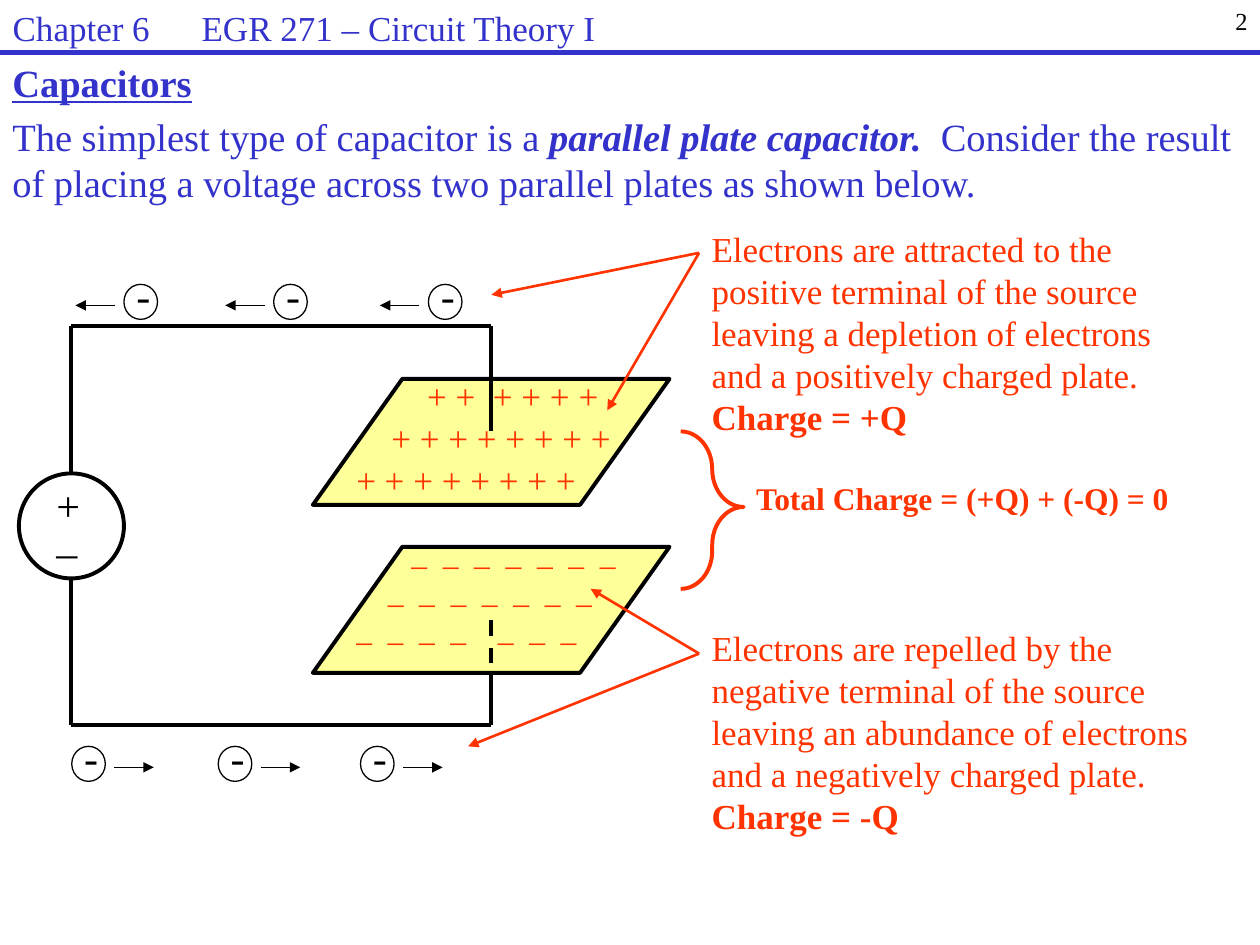
from lxml.etree import SubElement
from pptx import Presentation
from pptx.dml.color import RGBColor
from pptx.enum.dml import MSO_LINE
from pptx.enum.shapes import MSO_CONNECTOR, MSO_SHAPE
from pptx.enum.text import MSO_ANCHOR, PP_ALIGN
from pptx.oxml.ns import qn
from pptx.util import Pt


class Theme:
    font = "Times New Roman"
    blue = RGBColor(0x33, 0x33, 0xCC)
    red = RGBColor(0xFF, 0x33, 0x00)
    black = RGBColor(0, 0, 0)
    plate = RGBColor(0xFF, 0xFF, 0x99)
    number, label, note, body, sign = 14, 18, 20, 22, 24
    thin, arrow, wire, rule = 0.75, 1.5, 2.25, 3


def write(s, paragraphs, size, color, align=PP_ALIGN.LEFT, before=0, wrap=True):
    """Fill a shape with paragraphs, each a list of (text, style letters)."""
    tf = s.text_frame
    tf.word_wrap = wrap
    tf.vertical_anchor = MSO_ANCHOR.TOP
    for i, runs in enumerate(paragraphs):
        p = tf.add_paragraph() if i else tf.paragraphs[0]
        p.alignment = align
        p.space_before = Pt(before)
        for text, style in runs:
            r = p.add_run()
            r.text = text
            r.font.name, r.font.size = Theme.font, Pt(size)
            r.font.color.rgb = color
            r.font.bold = "b" in style
            r.font.italic = "i" in style
            r.font.underline = "u" in style
    return tf


def line(x1, y1, x2, y2, color, width, arrow=False):
    c = shapes.add_connector(MSO_CONNECTOR.STRAIGHT, Pt(x1), Pt(y1), Pt(x2), Pt(y2))
    c.line.color.rgb = color
    c.line.width = Pt(width)
    SubElement(c._element.spPr, qn("a:effectLst"))
    if arrow:
        SubElement(c.line._get_or_add_ln(), qn("a:tailEnd"), type="triangle")
    return c


prs = Presentation()
prs.slide_width, prs.slide_height = Pt(720), Pt(540)
slide = prs.slides.add_slide(prs.slide_layouts[5])
shapes = slide.shapes

# Header: title, page number and rule
title = shapes.title
title.left, title.top, title.width, title.height = Pt(0), Pt(0), Pt(528), Pt(24)
tf = write(title, [[("Chapter 6\tEGR 271 – Circuit Theory I", "")]],
           Theme.note, Theme.blue, before=4)
tabs = SubElement(tf.paragraphs[0]._p.get_or_add_pPr(), qn("a:tabLst"))
SubElement(tabs, qn("a:tab"), pos=str(Pt(108)), algn="l")
s = shapes.add_textbox(Pt(570), Pt(0), Pt(150), Pt(30))
write(s, [[("2", "")]], Theme.number, Theme.black, PP_ALIGN.RIGHT)
line(0, 30, 720, 30, Theme.blue, Theme.rule)

# Introduction
s = shapes.add_textbox(Pt(0), Pt(30), Pt(720), Pt(101))
write(s, [
    [("Capacitors", "bu")],
    [("The simplest type of capacitor is a ", ""),
     ("parallel plate capacitor.", "bi"),
     ("  Consider the result of placing a voltage across two parallel plates "
      "as shown below.", "")],
], Theme.body, Theme.blue, before=4.4)

# Plates, voltage source, electrons and the total-charge brace
electrons = [(x, 162.5, -1) for x in (70.8, 156.4, 244.8)]
electrons += [(x, 426.5, 1) for x in (41, 124.7, 206)]
outlines = [(MSO_SHAPE.PARALLELOGRAM, 178.8, y, 203.8, 72, Theme.black, Theme.wire)
            for y in (216.5, 312.5)]
outlines.append((MSO_SHAPE.OVAL, 10.8, 270.5, 60, 60, Theme.black, Theme.wire))
outlines.append((MSO_SHAPE.RIGHT_BRACE, 389, 246.5, 36, 90, Theme.red, Theme.wire))
outlines += [(MSO_SHAPE.OVAL, x, y, 19.2, 20, Theme.black, Theme.thin)
             for x, y, _ in electrons]
for kind, x, y, w, h, color, width in outlines:
    s = shapes.add_shape(kind, Pt(x), Pt(y), Pt(w), Pt(h))
    s.shadow.inherit = False
    s.line.color.rgb = color
    s.line.width = Pt(width)
    s.fill.background()
    if kind == MSO_SHAPE.PARALLELOGRAM:
        s.fill.solid()
        s.fill.fore_color.rgb = Theme.plate
        s.adjustments[0] = 0.71
    elif kind == MSO_SHAPE.RIGHT_BRACE:
        s.adjustments[0], s.adjustments[1] = 0.6, 0.48

# Wires; the last piece is hidden behind the lower plate
left, right, top, bottom = 40.8, 280.8, 186.5, 414.5
for ends in [(right, 246.5, right, top), (right, top, left, top),
             (left, top, left, 270.5), (left, 330.5, left, bottom),
             (right, bottom, left, bottom), (right, bottom, right, 384.5)]:
    line(*ends, Theme.black, Theme.wire)
c = line(right, 354.5, right, 384.5, Theme.black, Theme.wire)
c.line.dash_style = MSO_LINE.DASH

# Electron signs and their directions of motion
for x, y, way in electrons:
    s = shapes.add_textbox(Pt(x), Pt(y - 12), Pt(22), Pt(36))
    write(s, [[("-", "")]], Theme.sign, Theme.black, wrap=False)
    start = x + 9.6 + way * 14.8
    line(start, y + 12, start + way * 22.5, y + 12, Theme.black, Theme.thin, True)

# Source polarity
for sign, y in (("+", 270.5), ("_", 288.5)):
    s = shapes.add_textbox(Pt(25.2), Pt(y), Pt(28), Pt(36))
    write(s, [[(sign, "")]], Theme.sign, Theme.black, wrap=False)

# Plate charges: rows as (indent, groups of signs); a widened space joins groups
for y, h, size, spacing, gap, rows in [
    (210.5, 79, Theme.note, 0, 5,
     [(40.5, ["+ +", " ", "+ + + +"]), (20, ["+ + + + + + + +"]),
      (0, ["+ + + + + + + +"])]),
    (301.7, 72, Theme.label, 2.25, 11.25,
     [(31.5, ["_ _ _ _ _ _ _"]), (18, ["_ _ _ _ _ _ _"]),
      (0, ["_ _ _ _", " ", "_ _ _"])]),
]:
    s = shapes.add_textbox(Pt(196.5), Pt(y), Pt(168), Pt(h))
    tf = write(s, [[(g, "") for g in groups] for _, groups in rows], size, Theme.red)
    for p, (indent, _) in zip(tf.paragraphs, rows):
        pPr = p._p.get_or_add_pPr()
        pPr.set("marL", str(Pt(indent)))
        pPr.set("indent", "0")
        for r in p.runs:
            extra = gap if r.text == " " else spacing
            r.font._element.set("spc", str(int(extra * 100)))

# Explanations
for y, w, text, charge in [
    (126.5, 279, "Electrons are attracted to the positive terminal of the source "
     "leaving a depletion of electrons and a positively charged plate.", "Charge = +Q"),
    (354.5, 290, "Electrons are repelled by the negative terminal of the source "
     "leaving an abundance of electrons and a negatively charged plate.", "Charge = -Q"),
]:
    s = shapes.add_textbox(Pt(399.5), Pt(y), Pt(w), Pt(128))
    write(s, [[(text, "")], [(charge, "b")]], Theme.note, Theme.red)
s = shapes.add_textbox(Pt(425), Pt(270.3), Pt(253), Pt(29))
write(s, [[("Total Charge = (+Q) + (-Q) = 0", "b")]], Theme.label, Theme.red)

# Pointers from the explanations to wire and plate
for y, targets in [(144.5, [(347, 234.5), (280.8, 168.5)]),
                   (373.5, [(337.5, 336.5), (267.5, 426.5)])]:
    for x2, y2 in targets:
        line(399.5, y, x2, y2, Theme.red, Theme.arrow, True)

prs.save("out.pptx")
